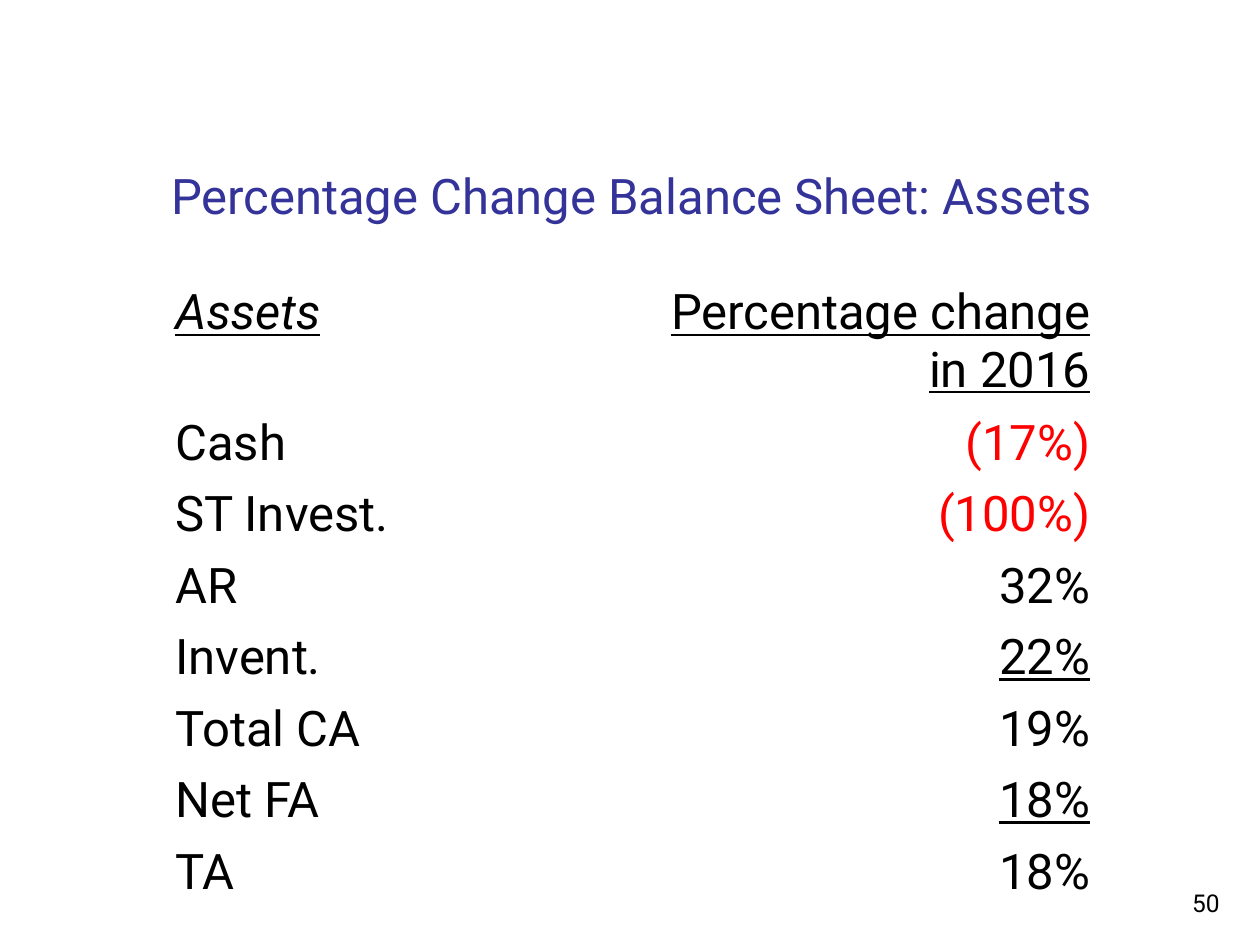
"""Build the slide on percentage change in balance sheet assets."""
import dataclasses

import pptx
import pptx.dml.color
import pptx.enum.text
import pptx.util

Cm = pptx.util.Cm
RGB = pptx.dml.color.RGBColor
ALIGN = pptx.enum.text.PP_ALIGN


@dataclasses.dataclass(frozen=True)
class Theme:
    font: str = "Roboto"
    title: RGB = RGB(0x33, 0x33, 0x99)
    text: RGB = RGB(0, 0, 0)
    negative: RGB = RGB(0xFF, 0, 0)
    body_size: int = 28
    number_size: int = 14


THEME = Theme()


def write(tf, text, size=THEME.body_size, color=THEME.text, align=ALIGN.LEFT,
          italic=False, underline=False):
    tf.word_wrap = True
    p = tf.paragraphs[0]
    p.alignment = align
    r = p.add_run()
    r.text = text
    r.font.name = THEME.font
    r.font.size = pptx.util.Pt(size)
    r.font.color.rgb = color
    r.font.italic = italic
    r.font.underline = underline


prs = pptx.Presentation()
prs.slide_width, prs.slide_height = Cm(25.4), Cm(19.05)
s = prs.slides.add_slide(prs.slide_layouts[6])

boxes = [
    ((3.2, 0.58, 21.64, 4.06), "Percentage Change Balance Sheet: Assets",
     dict(color=THEME.title)),
    ((19.56, 17.35, 5.28, 1.27), "50",
     dict(size=THEME.number_size, align=ALIGN.RIGHT)),
]
for place, text, style in boxes:
    tf = s.shapes.add_textbox(*map(Cm, place)).text_frame
    tf.vertical_anchor = pptx.enum.text.MSO_ANCHOR.BOTTOM
    write(tf, text, **style)

rows = [
    ("Assets", "Percentage change in 2016"),
    ("Cash", "(17%)"),
    ("ST Invest.", "(100%)"),
    ("AR", "32%"),
    ("Invent.", "22%"),
    ("Total CA", "19%"),
    ("Net FA", "18%"),
    ("TA", "18%"),
]
summed = ("Invent.", "Net FA")
widths = (9.37, 9.58)
row_height = 1.3

table = s.shapes.add_table(len(rows), len(widths), Cm(3.28), Cm(5.61),
                           Cm(sum(widths)), Cm(row_height * len(rows))).table
table.first_row = table.horz_banding = False
for column, width in zip(table.columns, widths):
    column.width = Cm(width)
for i, (label, change) in enumerate(rows):
    table.rows[i].height = Cm(row_height)
    header = i == 0
    for j in range(len(widths)):
        table.cell(i, j).fill.background()
    write(table.cell(i, 0).text_frame, label, italic=header, underline=header)
    write(table.cell(i, 1).text_frame, change, align=ALIGN.RIGHT,
          color=THEME.negative if change.startswith("(") else THEME.text,
          underline=header or label in summed)

prs.save("out.pptx")
